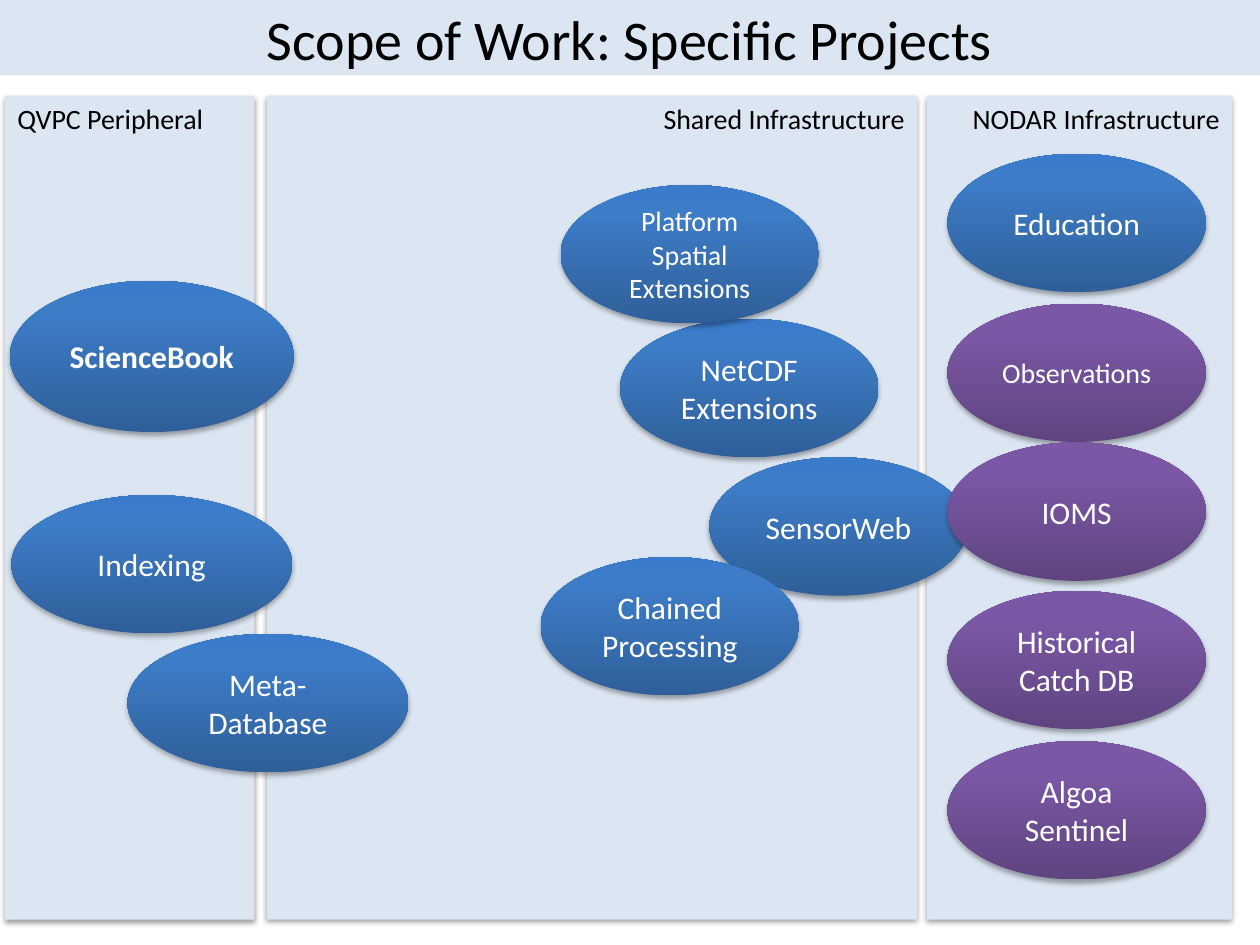
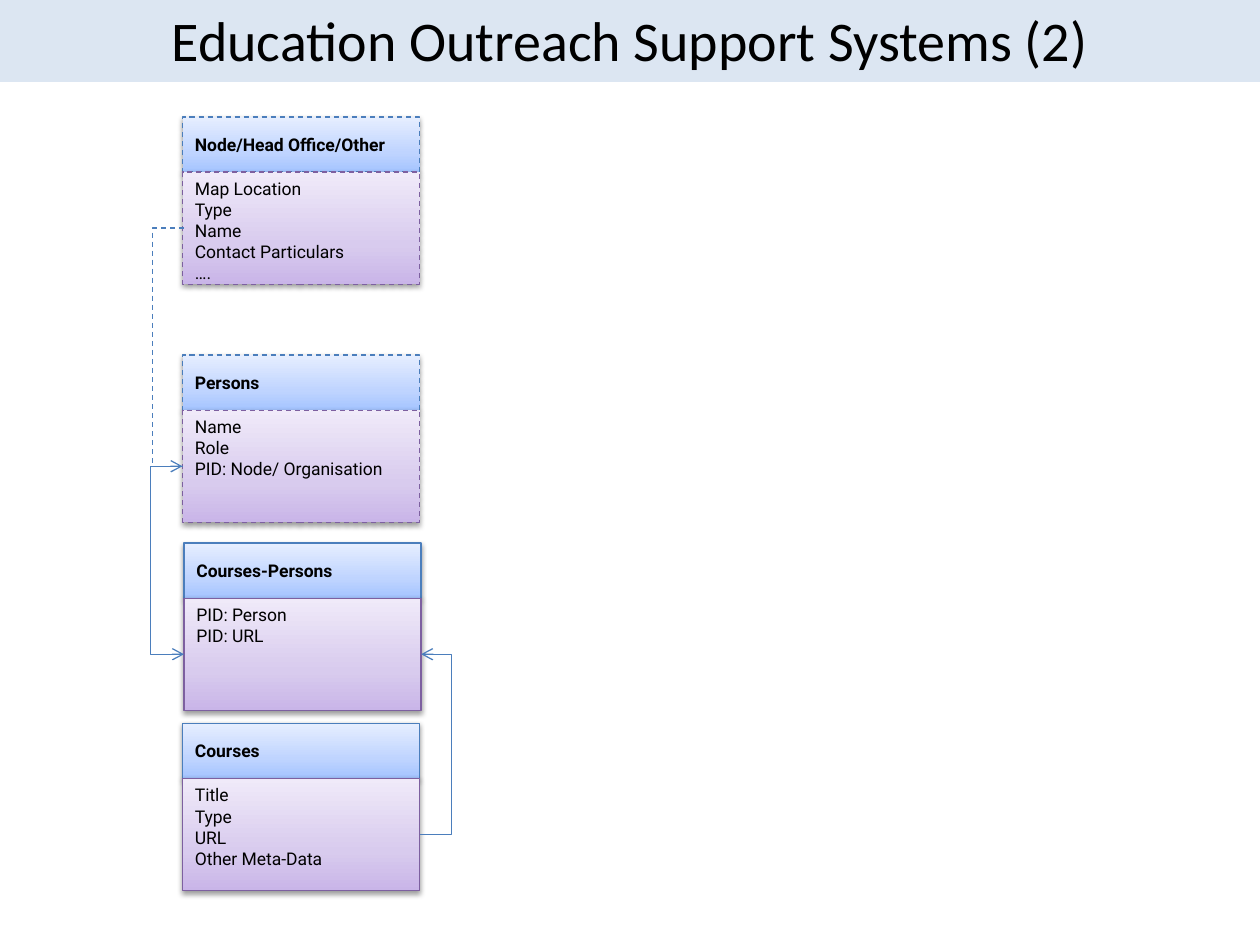
from copy import deepcopy

from lxml import etree
from pptx import Presentation
from pptx.dml.color import RGBColor
from pptx.enum.dml import MSO_LINE
from pptx.enum.shapes import MSO_CONNECTOR, MSO_SHAPE
from pptx.enum.text import MSO_ANCHOR, PP_ALIGN
from pptx.oxml.ns import qn
from pptx.util import Cm, Pt

RECTANGLE, ELLIPSE = MSO_SHAPE.RECTANGLE, MSO_SHAPE.OVAL
ELBOW = MSO_CONNECTOR.ELBOW
DASH = MSO_LINE.DASH
LEFT, CENTER, RIGHT = PP_ALIGN.LEFT, PP_ALIGN.CENTER, PP_ALIGN.RIGHT
TOP, MIDDLE = MSO_ANCHOR.TOP, MSO_ANCHOR.MIDDLE

BLACK = RGBColor(0x00, 0x00, 0x00)
WHITE = RGBColor(0xFF, 0xFF, 0xFF)
PALE_BLUE = RGBColor(0xDC, 0xE6, 0xF2)
EDGE_BLUE = RGBColor(0x4B, 0x7E, 0xBC)
EDGE_PURPLE = RGBColor(0x7D, 0x60, 0xA0)

BLUE = ((0, RGBColor(0x2F, 0x5F, 0x99)), (0.8, RGBColor(0x3D, 0x7C, 0xC7)),
        (1, RGBColor(0x3A, 0x7C, 0xCB)))
PURPLE = ((0, RGBColor(0x5F, 0x44, 0x80)), (0.8, RGBColor(0x7B, 0x58, 0xA6)),
          (1, RGBColor(0x7C, 0x57, 0xA8)))
LIGHT_BLUE = ((0, RGBColor(0xA4, 0xC4, 0xFF)), (0.35, RGBColor(0xBF, 0xD4, 0xFF)),
              (1, RGBColor(0xE6, 0xEE, 0xFF)))
LIGHT_PURPLE = ((0, RGBColor(0xC9, 0xB5, 0xE8)), (0.35, RGBColor(0xD8, 0xCB, 0xEE)),
                (1, RGBColor(0xF0, 0xEA, 0xF9)))

SLIDE_WIDTH, SLIDE_HEIGHT = 25.4, 19.05
PANEL_HEIGHT = 16.61
PANELS = [
    (18.59, 6.15, "NODAR Infrastructure", RIGHT),
    (0, 5.03, "QVPC Peripheral", LEFT),
    (5.28, 13.11, "Shared Infrastructure", RIGHT),
]
PROJECT_SIZE = (5.21, 2.79)
WIDE_PROJECT = (5.66, 2.79)
SHARED_PROJECTS = [
    (14.2, 7.29, "SensorWeb", {}),
    (12.4, 4.5, "NetCDF\nExtensions", {}),
    (10.8, 9.3, "Chained Processing", {}),
    (11.2, 1.8, "Platform Spatial Extensions", {"size": 16}),
    (0.1, 3.73, "ScienceBook", {"extent": (5.72, 3.05), "bold": True}),
    (0.13, 8.05, "Indexing", {"extent": WIDE_PROJECT}),
]
COLUMN_X = 19
COLUMN_PROJECTS = [
    (4.19, "Observations", {"size": 16, "stops": PURPLE}),
    (6.99, "IOMS", {"stops": PURPLE}),
    (9.98, "Historical Catch DB", {"stops": PURPLE}),
    (13.01, "Algoa\nSentinel", {"stops": PURPLE}),
    (1.17, "Education", {}),
]

ENTITY_WIDTH, HEADING_HEIGHT, FIELDS_HEIGHT = 4.78, 1.11, 2.26
LINK_DEPTH = HEADING_HEIGHT + FIELDS_HEIGHT / 2
JOIN_SHIFT = 0.03
NODE_Y, PERSONS_Y, ENROLMENT_Y, COURSES_Y = 0, 4.8, 8.59, 12.22
ENTITIES = [
    (0, NODE_Y, "Node/Head Office/Other",
     "Map Location\nType\nName\nContact Particulars\n….", True),
    (0, PERSONS_Y, "Persons", "Name\nRole\nPID: Node/ Organisation", True),
    (0, COURSES_Y, "Courses", "Title\nType\nURL\nOther Meta-Data", False),
    (JOIN_SHIFT, ENROLMENT_Y, "Courses-Persons", "PID: Person\nPID: URL", False),
]
RELATIONS = [
    (JOIN_SHIFT, NODE_Y, 0, PERSONS_Y, -0.61, True),
    (0, PERSONS_Y, JOIN_SHIFT, ENROLMENT_Y, -0.64, False),
    (ENTITY_WIDTH, COURSES_Y, ENTITY_WIDTH + JOIN_SHIFT, ENROLMENT_Y, 5.42, False),
]


def write(shape, text, *, size, font="Calibri", color=BLACK, bold=False,
          align=LEFT, anchor=TOP):
    frame = shape.text_frame
    frame.word_wrap = True
    frame.vertical_anchor = anchor
    frame.text = text
    for paragraph in frame.paragraphs:
        paragraph.alignment = align
        style = paragraph.runs[0].font
        style.name, style.size, style.bold = font, Pt(size), bold
        style.color.rgb = color


def draw(shapes, kind, box, fill, edge=None, dashed=False):
    shape = shapes.add_shape(kind, *map(Cm, box))
    if isinstance(fill, RGBColor):
        shape.fill.solid()
        shape.fill.fore_color.rgb = fill
    else:
        paint_gradient(shape, fill)
    if edge is None:
        shape.line.fill.background()
    else:
        style_line(shape.line, edge, dashed)
    shape.shadow.inherit = False
    return shape


def style_line(line, color, dashed):
    line.color.rgb = color
    line.width = Pt(0.75)
    if dashed:
        line.dash_style = DASH


def paint_gradient(shape, stops):
    shape.fill.gradient()
    shape.fill.gradient_angle = 90
    stop_list = shape._element.spPr.find(".//" + qn("a:gsLst"))
    stop_list.append(deepcopy(stop_list[0]))
    for stop, (position, color) in zip(shape.fill.gradient_stops, stops):
        stop.position = position
        stop.color.rgb = color


def cast_shadow(shape, opacity=38, distance=1.6):
    effects = shape._element.spPr.find(qn("a:effectLst"))
    shadow = etree.SubElement(
        effects, qn("a:outerShdw"), blurRad=str(Pt(3.1)), dist=str(Pt(distance)),
        dir="5400000", rotWithShape="0")
    color = etree.SubElement(shadow, qn("a:srgbClr"), val=str(BLACK))
    etree.SubElement(color, qn("a:alpha"), val=str(opacity * 1000))


def title_band(slide, text, top, height):
    band = draw(slide.shapes, RECTANGLE, (0, top, SLIDE_WIDTH, height), PALE_BLUE)
    write(band, text, size=32, align=CENTER, anchor=MIDDLE)


def panel(slide, box, heading, align):
    area = draw(slide.shapes, RECTANGLE, box, PALE_BLUE)
    cast_shadow(area)
    write(area, heading, size=16, align=align)


def project(slide, left, top, name, extent=PROJECT_SIZE, size=18, bold=False,
            stops=BLUE):
    bubble = draw(slide.shapes, ELLIPSE, (left, top, *extent), stops)
    cast_shadow(bubble, opacity=35, distance=1.8)
    write(bubble, name, size=size, bold=bold, color=WHITE, align=CENTER, anchor=MIDDLE)


def project_board(slide, left, top):
    for x, width, heading, align in PANELS:
        panel(slide, (left + x, top, width, PANEL_HEIGHT), heading, align)
    for x, y, name, look in SHARED_PROJECTS:
        project(slide, left + x, top + y, name, **look)
    for y, name, look in COLUMN_PROJECTS:
        project(slide, left + COLUMN_X, top + y, name, **look)
    project(slide, left + 2.47, top + 10.85, "Meta-Database", extent=WIDE_PROJECT)


def entity(slide, left, top, name, fields, dashed):
    card = slide.shapes.add_group_shape().shapes
    heading = draw(card, RECTANGLE, (left, top, ENTITY_WIDTH, HEADING_HEIGHT),
                   LIGHT_BLUE, EDGE_BLUE, dashed)
    body = draw(card, RECTANGLE,
                (left, top + HEADING_HEIGHT, ENTITY_WIDTH, FIELDS_HEIGHT),
                LIGHT_PURPLE, EDGE_PURPLE, dashed)
    for part in (heading, body):
        cast_shadow(part)
    write(heading, name, size=10, font="Roboto", bold=True, anchor=MIDDLE)
    write(body, fields, size=10, font="Roboto")


def relation(slide, start, end, lane, dashed):
    link = slide.shapes.add_connector(ELBOW, *map(Cm, (*start, *end)))
    style_line(link.line, EDGE_BLUE, dashed)
    properties = link._element.spPr
    etree.SubElement(properties.find(qn("a:ln")), qn("a:tailEnd"), type="arrow")
    etree.SubElement(properties, qn("a:effectLst"))
    bend = round((lane - start[0]) / (end[0] - start[0]) * 100000)
    guides = properties.find(qn("a:prstGeom")).get_or_add_avLst()
    etree.SubElement(guides, qn("a:gd"), name="adj1", fmla=f"val {bend}")


def entity_diagram(slide, left, top):
    for x, y, name, fields, dashed in ENTITIES:
        entity(slide, left + x, top + y, name, fields, dashed)
    for x1, y1, x2, y2, lane, dashed in RELATIONS:
        relation(slide, (left + x1, top + y1 + LINK_DEPTH),
                 (left + x2, top + y2 + LINK_DEPTH), left + lane, dashed)


def main():
    deck = Presentation()
    deck.slide_width, deck.slide_height = Cm(SLIDE_WIDTH), Cm(SLIDE_HEIGHT)
    blank = deck.slide_layouts[6]

    scope = deck.slides.add_slide(blank)
    title_band(scope, "Scope of Work: Specific Projects", 0, 1.52)
    project_board(scope, 0.1, 1.93)

    outreach = deck.slides.add_slide(blank)
    title_band(outreach, "Education Outreach Support Systems (2)", -0.08, 1.73)
    entity_diagram(outreach, 3.68, 2.36)

    deck.save("out.pptx")


if __name__ == "__main__":
    main()
